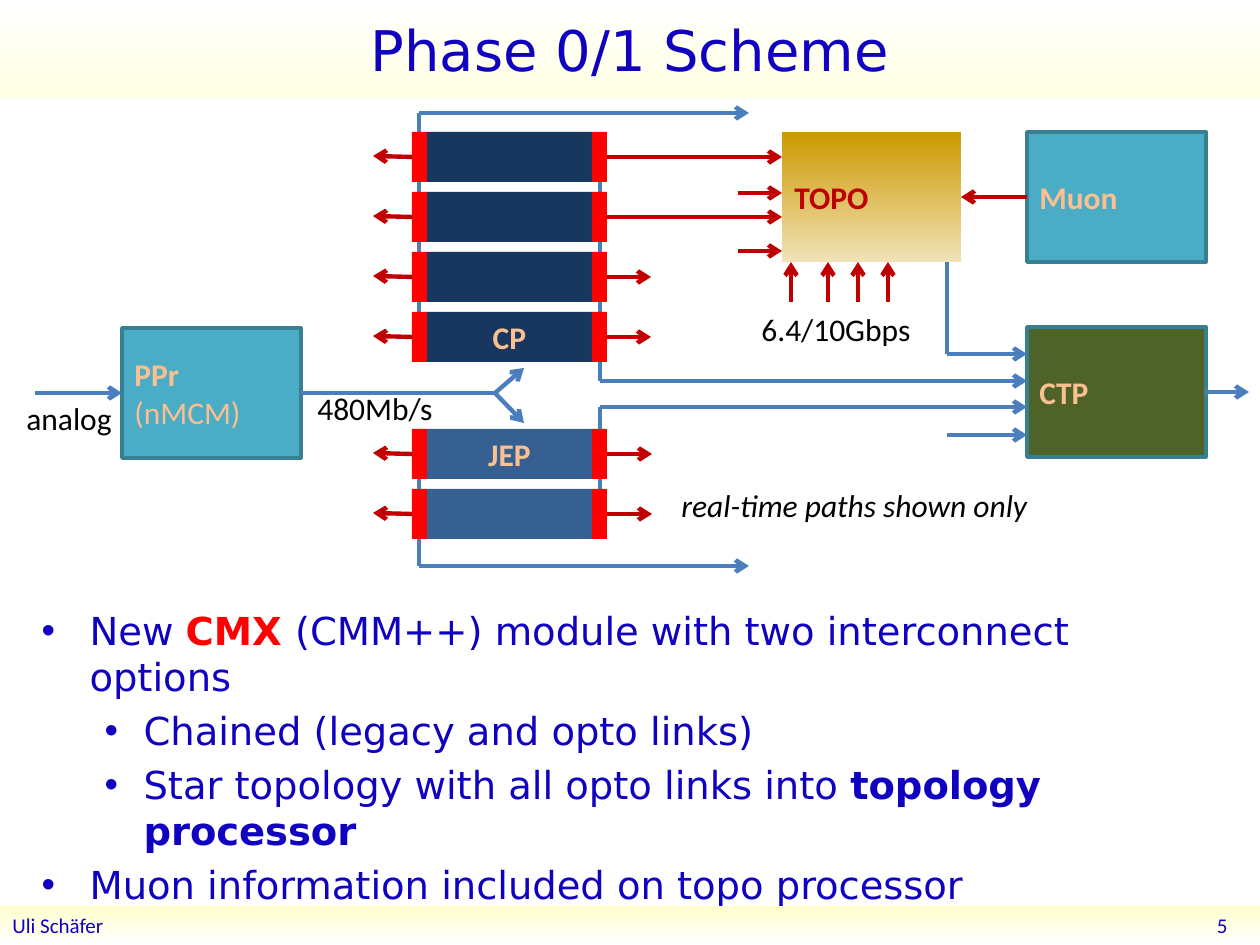
import pptx
import pptx.util
import pptx.dml.color
import pptx.enum.shapes
import pptx.enum.text
import pptx.oxml.ns
import lxml.etree

RGBColor = pptx.dml.color.RGBColor
Align = pptx.enum.text.PP_ALIGN
Anchor = pptx.enum.text.MSO_ANCHOR
Pt = pptx.util.Pt
qn = pptx.oxml.ns.qn

EMU_PER_PX = 914400 / 126
NAVY_TEXT = RGBColor(0x0F, 0x01, 0xBF)
BLACK = RGBColor(0, 0, 0)
WHITE = RGBColor(0xFF, 0xFF, 0xFF)
RED = RGBColor(0xFF, 0, 0)
DARK_RED = RGBColor(0xC0, 0, 0)
BLUE = RGBColor(0x4B, 0x7E, 0xBC)
PEACH = RGBColor(0xFA, 0xC0, 0x90)
CP_BLUE = RGBColor(0x17, 0x37, 0x5E)
JEP_BLUE = RGBColor(0x37, 0x60, 0x92)
TEAL = RGBColor(0x4B, 0xAC, 0xC6)
TEAL_EDGE = RGBColor(0x37, 0x7F, 0x92)
GREEN = RGBColor(0x4F, 0x62, 0x28)
GOLD = RGBColor(0xCC, 0x99, 0)
PALE_GOLD = RGBColor(0xF1, 0xE2, 0xB7)
CREAM = RGBColor(0xFF, 0xFF, 0xE3)
FOOTER_YELLOW = RGBColor(0xFF, 0xFF, 0xCC)

TOP, LEFT, BOTTOM, RIGHT = range(4)
MODULE_HEIGHT = 50
MODULE_PITCH = 60


def px(value):
    return round(value * EMU_PER_PX)


def place(shape, left, top, width, height):
    shape.left, shape.top = px(left), px(top)
    shape.width, shape.height = px(width), px(height)


def add_run(paragraph, text, color, size=18, font="Calibri", bold=False, italic=False):
    run = paragraph.add_run()
    run.text = text
    run.font.name, run.font.size = font, Pt(size)
    run.font.bold, run.font.italic = bold, italic
    run.font.color.rgb = color


def fill_gradient(shape, upper, lower):
    shape.fill.gradient()
    shape.fill.gradient_angle = 270
    for stop, color in zip(shape.fill.gradient_stops, (upper, lower)):
        stop.color.rgb = color


def add_rectangle(shapes, left, top, width, height, fill=None, edge=None):
    shape = shapes.add_shape(pptx.enum.shapes.MSO_SHAPE.RECTANGLE,
                             px(left), px(top), px(width), px(height))
    shape.shadow.inherit = False
    if fill is not None:
        shape.fill.solid()
        shape.fill.fore_color.rgb = fill
    if edge is None:
        shape.line.fill.background()
    else:
        shape.line.color.rgb = edge
        shape.line.width = Pt(2)
    return shape


def add_block(slide, left, top, lines, fill=None, edge=None, color=PEACH):
    block = add_rectangle(slide.shapes, left, top, 179, 130, fill, edge)
    block.text_frame.word_wrap = False
    paragraph = block.text_frame.paragraphs[0]
    paragraph.alignment = Align.LEFT
    for index, line in enumerate(lines):
        if index:
            paragraph.add_line_break()
        add_run(paragraph, line, color, bold=index == 0)
    return block


def add_label(slide, left, top, width, text, italic=False):
    label = slide.shapes.add_textbox(px(left), px(top), px(width), px(50))
    label.text_frame.word_wrap = True
    add_run(label.text_frame.paragraphs[0], text, BLACK, italic=italic)


def add_line(slide, start, end, color=BLUE, arrow=True, source=None, target=None):
    connector = slide.shapes.add_connector(
        pptx.enum.shapes.MSO_CONNECTOR.STRAIGHT, *map(px, start + end))
    connector.line.color.rgb = color
    connector.line.width = Pt(2.5)
    if arrow:
        outline = connector.line._get_or_add_ln()
        lxml.etree.SubElement(outline, qn("a:tailEnd"), type="arrow")
    lxml.etree.SubElement(connector._element.spPr, qn("a:effectLst"))
    if source:
        connector.begin_connect(*source)
    if target:
        connector.end_connect(*target)


def add_crate(slide, top, names, color, arrow_ends):
    group = slide.shapes.add_group_shape()
    for row, (name, arrow_end) in enumerate(zip(names, arrow_ends)):
        module_top = top + row * MODULE_PITCH
        middle = module_top + MODULE_HEIGHT // 2
        module = add_rectangle(group.shapes, 427, module_top, 165, MODULE_HEIGHT, color)
        left_strip, right_strip = [
            add_rectangle(group.shapes, left, module_top, 15, MODULE_HEIGHT, RED)
            for left in (412, 592)]
        if name:
            paragraph = module.text_frame.paragraphs[0]
            paragraph.alignment = Align.CENTER
            add_run(paragraph, name, PEACH, bold=True)
        add_line(slide, (412, middle), (373, middle - 1), DARK_RED, source=(left_strip, LEFT))
        add_line(slide, (607, middle), (arrow_end, middle), DARK_RED,
                 source=(right_strip, RIGHT))


def add_title(slide):
    title = slide.shapes.title
    place(title, 0, 0, 1260, 98)
    fill_gradient(title, WHITE, CREAM)
    title.text_frame.vertical_anchor = Anchor.MIDDLE
    paragraph = title.text_frame.paragraphs[0]
    paragraph.alignment = Align.CENTER
    add_run(paragraph, "Phase 0/1 Scheme", NAVY_TEXT, 32, "DejaVu Sans")


def add_bullets(slide):
    items = [
        (0, [("New ", NAVY_TEXT, False), ("CMX ", RED, True),
             ("(CMM++) module with two interconnect options", NAVY_TEXT, False)]),
        (1, [("Chained (legacy and opto links)", NAVY_TEXT, False)]),
        (1, [("Star topology with all opto links into ", NAVY_TEXT, False),
             ("topology processor", NAVY_TEXT, True)]),
        (0, [("Muon information included on topo processor", NAVY_TEXT, False)]),
    ]
    indents = [(48, -48), (102, -39)]
    body = slide.placeholders[1]
    place(body, 29, 601, 1201, 295)
    frame = body.text_frame
    frame.auto_size = pptx.enum.text.MSO_AUTO_SIZE.NONE
    for index, (level, runs) in enumerate(items):
        paragraph = frame.add_paragraph() if index else frame.paragraphs[0]
        paragraph.level = level
        paragraph.space_before = Pt(4.4)
        properties = paragraph._p.get_or_add_pPr()
        margin, indent = indents[level]
        properties.set("marL", str(px(margin)))
        properties.set("indent", str(px(indent)))
        lxml.etree.SubElement(properties, qn("a:buChar"), char="•")
        for text, color, bold in runs:
            add_run(paragraph, text, color, 22, "DejaVu Sans", bold)


def add_footer(slide):
    bar = add_rectangle(slide.shapes, 0, 906, 1260, 39)
    fill_gradient(bar, FOOTER_YELLOW, WHITE)
    number = slide.shapes.add_textbox(px(974), px(905), px(266), px(40))
    number.text_frame.word_wrap = True
    for shape, text, alignment in ((bar, "Uli Schäfer", Align.LEFT),
                                   (number, "5", Align.RIGHT)):
        shape.text_frame.vertical_anchor = Anchor.MIDDLE
        paragraph = shape.text_frame.paragraphs[0]
        paragraph.alignment = alignment
        add_run(paragraph, text, NAVY_TEXT, 12)


def add_backplanes(slide):
    for x, start, end in ((419, 323, 113), (419, 566, 430), (600, 489, 407), (600, 381, 171)):
        add_line(slide, (x, start), (x, end), arrow=False)
    for y in (113, 566):
        add_line(slide, (419, y), (749, y))


def add_links(slide, ppr, topo, muon, ctp):
    add_line(slide, (35, 393), (122, 393), target=(ppr, LEFT))
    add_line(slide, (301, 393), (495, 393), arrow=False, source=(ppr, RIGHT))
    for y in (368, 423):
        add_line(slide, (495, 393), (524, y))
    for x, y in ((947, 354), (600, 381), (600, 407), (947, 435)):
        add_line(slide, (x, y), (1027, y))
    add_line(slide, (947, 354), (947, 262), arrow=False)
    add_line(slide, (1206, 392), (1249, 392), source=(ctp, RIGHT))
    add_line(slide, (1027, 197), (961, 197), DARK_RED,
             source=(muon, LEFT), target=(topo, RIGHT))
    for y in (193, 251):
        add_line(slide, (738, y), (782, y), DARK_RED)
    for x in (791, 828, 858, 888):
        add_line(slide, (x, 302), (x, 262), DARK_RED)


def main():
    presentation = pptx.Presentation()
    presentation.slide_width, presentation.slide_height = px(1260), px(945)
    slide = presentation.slides.add_slide(presentation.slide_layouts[1])
    add_title(slide)
    add_footer(slide)
    add_bullets(slide)
    add_backplanes(slide)
    add_crate(slide, 132, ["", "", "", "CP"], CP_BLUE, [782, 782, 651, 651])
    add_crate(slide, 429, ["JEP", ""], JEP_BLUE, [652, 652])
    ppr = add_block(slide, 122, 328, ["PPr ", "(nMCM)"], TEAL, TEAL_EDGE)
    topo = add_block(slide, 782, 132, ["TOPO"], color=DARK_RED)
    fill_gradient(topo, GOLD, PALE_GOLD)
    muon = add_block(slide, 1027, 132, ["Muon"], TEAL, TEAL_EDGE)
    ctp = add_block(slide, 1027, 327, ["CTP"], GREEN, TEAL_EDGE)
    add_links(slide, ppr, topo, muon, ctp)
    add_label(slide, 14, 393, 128, "analog")
    add_label(slide, 305, 383, 150, "480Mb/s")
    add_label(slide, 669, 480, 397, "real-time paths shown only", italic=True)
    add_label(slide, 749, 304, 190, "6.4/10Gbps")
    presentation.save("out.pptx")


if __name__ == "__main__":
    main()
